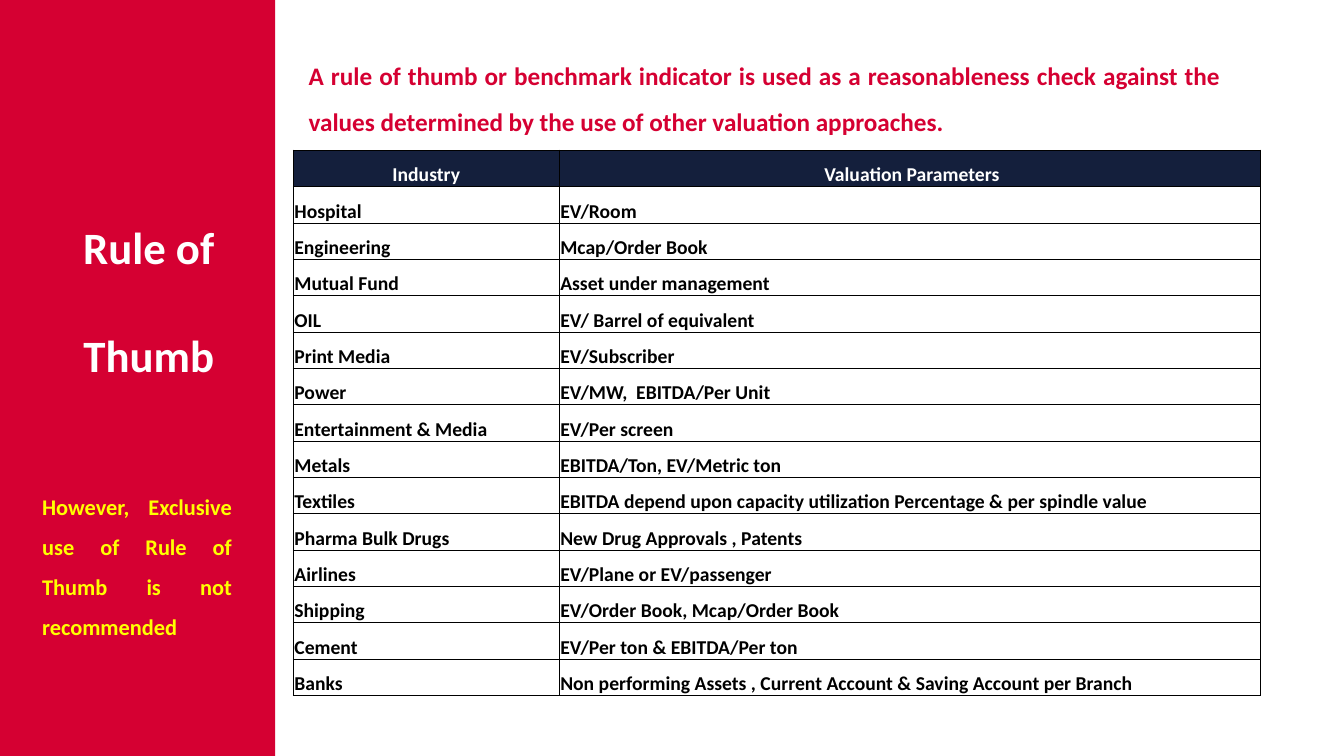
from lxml.etree import SubElement
from pptx import Presentation
from pptx.dml.color import RGBColor
from pptx.enum.shapes import MSO_SHAPE as Shape
from pptx.enum.text import MSO_ANCHOR as Anchor, MSO_AUTO_SIZE as AutoSize, PP_ALIGN as Align
from pptx.oxml.ns import qn
from pptx.util import Inches, Pt

WIDTH, HEIGHT = Inches(13.33), Inches(7.5)
FONT = "Calibri"
COLORS = {"red": "D50032", "navy": "141F3C", "white": "FFFFFF", "black": "000000", "yellow": "FFFF00"}
INDUSTRY_SHARE = 0.275
PARAMETERS = [
    ("Industry", " Valuation Parameters"),
    ("Hospital", "EV/Room"),
    ("Engineering", "Mcap/Order Book"),
    ("Mutual Fund", "Asset under management"),
    ("OIL", "EV/ Barrel of equivalent"),
    ("Print Media", "EV/Subscriber"),
    ("Power", "EV/MW,  EBITDA/Per Unit"),
    ("Entertainment & Media", "EV/Per screen"),
    ("Metals", "EBITDA/Ton, EV/Metric ton"),
    ("Textiles", "EBITDA depend upon capacity utilization Percentage & per spindle value"),
    ("Pharma Bulk Drugs", "New Drug Approvals , Patents"),
    ("Airlines", "EV/Plane or EV/passenger"),
    ("Shipping", "EV/Order Book, Mcap/Order Book"),
    ("Cement", "EV/Per ton & EBITDA/Per ton"),
    ("Banks", "Non performing Assets , Current Account & Saving Account per Branch"),
]


def color(name):
    """Return the named colour."""
    return RGBColor.from_string(COLORS[name])


def area(left, top, width, height):
    """Turn percentages of the slide into a position and size."""
    return [int(share * side / 100) for share, side in
            ((left, WIDTH), (top, HEIGHT), (width, WIDTH), (height, HEIGHT))]


def write(frame, text, size, ink, align=Align.JUSTIFY, spacing=1.5):
    """Write one bold paragraph into a text frame."""
    paragraph = frame.paragraphs[0]
    paragraph.alignment, paragraph.line_spacing = align, spacing
    paragraph.space_before = Pt(0)
    run = paragraph.add_run()
    run.text = text
    run.font.name, run.font.size, run.font.bold = FONT, Pt(size), True
    run.font.color.rgb = color(ink)
    return paragraph


def fill_placeholder(holder, box, *text, **layout):
    """Move a placeholder and fill it with an unbulleted paragraph."""
    holder.left, holder.top, holder.width, holder.height = box
    frame = holder.text_frame
    frame.word_wrap, frame.vertical_anchor = True, Anchor.TOP
    frame.auto_size = AutoSize.SHAPE_TO_FIT_TEXT
    properties = write(frame, *text, **layout)._p.get_or_add_pPr()
    properties.set("marL", "0")
    properties.set("indent", "0")
    SubElement(properties, qn("a:buNone"))


def add_panel(slide, box):
    """Add a plain red rectangle."""
    panel = slide.shapes.add_shape(Shape.RECTANGLE, *box)
    panel.shadow.inherit = False
    panel.fill.solid()
    panel.fill.fore_color.rgb = color("red")
    panel.line.fill.background()
    return panel


def add_border(cell, side, points):
    """Draw one black edge of a cell."""
    edge = SubElement(cell._tc.get_or_add_tcPr(), qn(f"a:ln{side}"), w=str(Pt(points)))
    SubElement(SubElement(edge, qn("a:solidFill")), qn("a:srgbClr"), val=COLORS["black"])


def format_cell(cell, text, header, outer):
    """Write a cell, with thick edges on its outer sides."""
    cell.margin_left = cell.margin_right = cell.margin_top = Inches(0.01)
    cell.margin_bottom = 0
    cell.vertical_anchor = Anchor.MIDDLE
    for side in "LRTB":
        add_border(cell, side, 1 if side in outer else 0.5)
    cell.fill.solid()
    cell.fill.fore_color.rgb = color("navy" if header else "white")
    write(cell.text_frame, text, 14, "white" if header else "black",
          Align.CENTER if header else Align.JUSTIFY)


def add_parameters(slide, box):
    """Add the table of industries and their valuation parameters."""
    table = slide.shapes.add_table(len(PARAMETERS), 2, *box).table
    table.horz_banding = False
    for column, share in zip(table.columns, (INDUSTRY_SHARE, 1 - INDUSTRY_SHARE)):
        column.width = int(box[2] * share)
    last = len(PARAMETERS) - 1
    for row, texts in enumerate(PARAMETERS):
        for column, text in enumerate(texts):
            outer = "LR"[column] + {0: "T", last: "B"}.get(row, "")
            format_cell(table.cell(row, column), text, row == 0, outer)


def main():
    """Build the slide and save it."""
    deck = Presentation()
    deck.slide_width, deck.slide_height = WIDTH, HEIGHT
    slide = deck.slides.add_slide(deck.slide_layouts[1])
    title, statement = slide.placeholders
    sidebar = add_panel(slide, area(0, 0, 20.48, 100))
    title._element.addprevious(sidebar._element)
    fill_placeholder(title, area(1.73, 21.33, 18.68, 28), "Rule of Thumb", 32, "white",
                     align=Align.CENTER, spacing=2)
    add_parameters(slide, area(21.83, 19.87, 71.94, 72.13))
    fill_placeholder(statement, area(22.21, 5.33, 69.39, 12.8),
                     "A rule of thumb or benchmark indicator is used as a reasonableness check "
                     "against the values determined by the use of other valuation approaches.",
                     18, "red")
    caveat = add_panel(slide, area(2.4, 60.27, 15.6, 27.6)).text_frame
    caveat.word_wrap, caveat.vertical_anchor = True, Anchor.MIDDLE
    write(caveat, "However, Exclusive use of Rule of Thumb is not recommended", 16, "yellow")
    deck.save("out.pptx")


if __name__ == "__main__":
    main()
